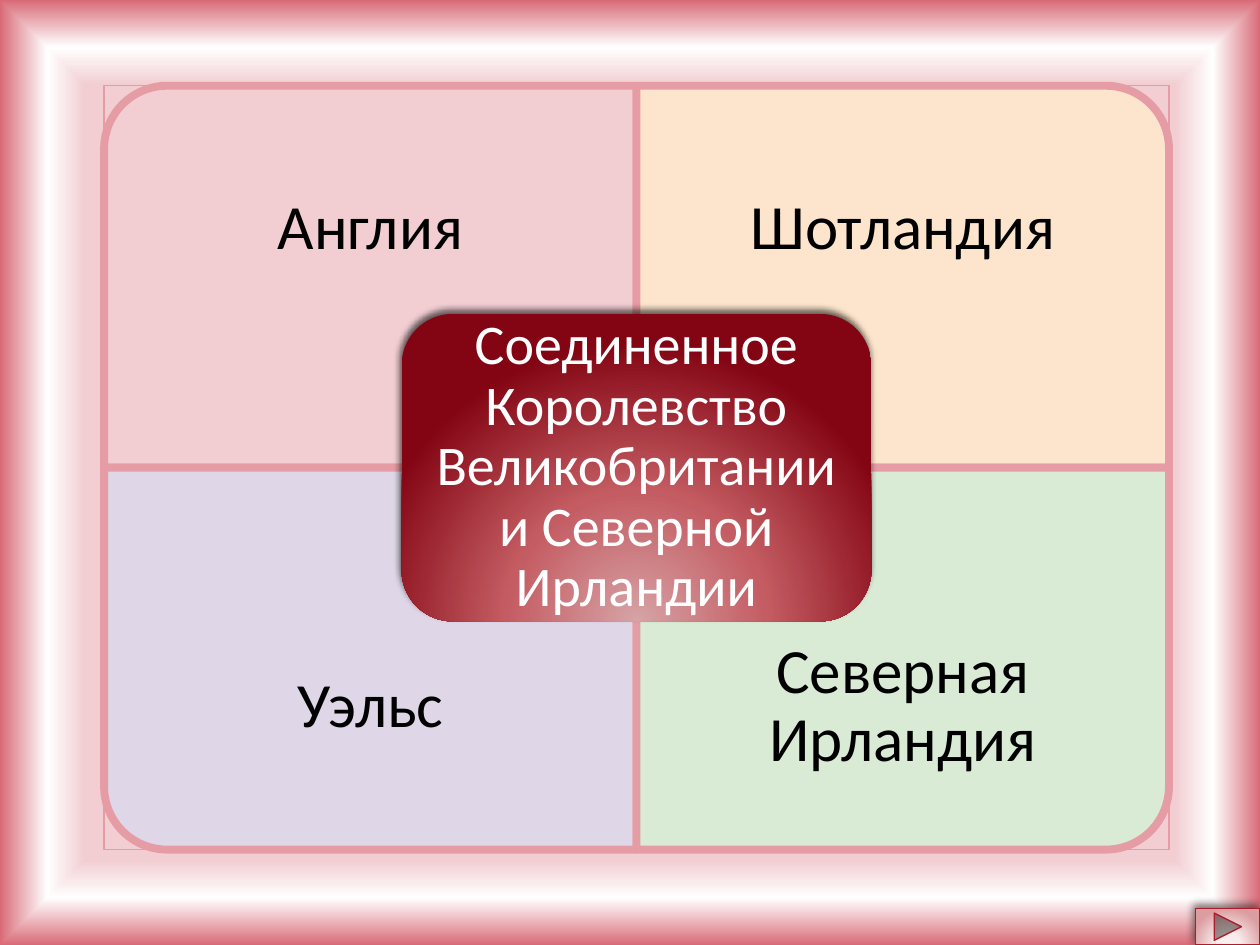
"""Build a slide showing the four parts of the United Kingdom around its full name."""
from math import cos, pi, sin

from lxml.etree import SubElement
from pptx import Presentation
from pptx.dml.color import RGBColor
from pptx.enum.shapes import MSO_SHAPE as Preset
from pptx.enum.text import MSO_ANCHOR as Anchor, PP_ALIGN as Align
from pptx.oxml.ns import qn
from pptx.util import Pt

BLACK = RGBColor(0x00, 0x00, 0x00)
WHITE = RGBColor(0xFF, 0xFF, 0xFF)
PINK = RGBColor(0xF2, 0xCE, 0xD2)
PEACH = RGBColor(0xFD, 0xE5, 0xCD)
LILAC = RGBColor(0xDF, 0xD7, 0xE7)
GREEN = RGBColor(0xD9, 0xEA, 0xD5)
ROSE = RGBColor(0xE6, 0x9C, 0xA4)
CORAL = RGBColor(0xD9, 0x6B, 0x77)
CRIMSON = RGBColor(0xAB, 0x1D, 0x2D)

COUNTRIES = [
    ("Англия", PINK, -1, -1),
    ("Шотландия", PEACH, 1, -1),
    ("Уэльс", LILAC, -1, 1),
    ("Северная Ирландия", GREEN, 1, 1),
]
KINGDOM = "Соединенное Королевство Великобритании и Северной Ирландии"

BACKDROP_STOPS = [(0, PINK), (82, PINK), (90, WHITE), (100, CORAL)]
KINGDOM_STOPS = [
    (0, RGBColor(0xD6, 0xA3, 0xA6)),
    (46, RGBColor(0xC4, 0x5D, 0x63)),
    (100, RGBColor(0x83, 0x04, 0x12)),
]
BUTTON_STOPS = [
    (0, RGBColor(0xFB, 0xF0, 0xF0)),
    (34, RGBColor(0xF9, 0xEC, 0xEC)),
    (100, RGBColor(0xDC, 0x9D, 0xA0)),
]
CENTRED = (50, 50, 50, 50)
BELOW = (50, 155, 50, -55)

SLIDE_W, SLIDE_H = 720, 540
MAP_LEFT, MAP_TOP, MAP_W, MAP_H = 59.5, 49, 608.5, 436.5
MID_X, MID_Y = MAP_LEFT + MAP_W / 2, MAP_TOP + MAP_H / 2
RADIUS, ARC_STEPS = 36, 24
KINGDOM_W, KINGDOM_H = 268.5, 175.7
BUTTON_W, BUTTON_H = 36.7, 20.9


def path_gradient(owner, fill, stops, path, focus):
    fill.gradient()
    gradient = owner._element.find(".//" + qn("a:gradFill"))
    for child in list(gradient):
        gradient.remove(child)
    stop_list = SubElement(gradient, qn("a:gsLst"))
    for position, color in stops:
        stop = SubElement(stop_list, qn("a:gs"), pos=str(position * 1000))
        SubElement(stop, qn("a:srgbClr"), val=str(color))
    shade = SubElement(gradient, qn("a:path"), path=path)
    sides = {side: str(share * 1000) for side, share in zip("ltrb", focus)}
    SubElement(shade, qn("a:fillToRect"), **sides)


def cast_shadow(shape, alpha, blur, distance):
    effects = shape._element.spPr.find(qn("a:effectLst"))
    shadow = SubElement(effects, qn("a:outerShdw"), blurRad=str(Pt(blur)),
                        dist=str(Pt(distance)), dir=str(245 * 60000), rotWithShape="0")
    color = SubElement(shadow, qn("a:srgbClr"), val=str(BLACK))
    SubElement(color, qn("a:alpha"), val=str(alpha * 1000))


def write(shape, text, *, size, color, top, bottom, side):
    frame = shape.text_frame
    frame.word_wrap = True
    frame.vertical_anchor = Anchor.MIDDLE
    frame.margin_left = frame.margin_right = Pt(side)
    frame.margin_top, frame.margin_bottom = Pt(top), Pt(bottom)
    paragraph = frame.paragraphs[0]
    paragraph.alignment = Align.CENTER
    paragraph.line_spacing = 0.9
    run = paragraph.add_run()
    run.text = text
    run.font.name, run.font.size = "Calibri", Pt(size)
    run.font.color.rgb = color


def outline(shape, color, width):
    shape.shadow.inherit = False
    shape.line.color.rgb = color
    shape.line.width = Pt(width)


def add_preset(shapes, preset, left, top, width, height):
    return shapes.add_shape(preset, Pt(left), Pt(top), Pt(width), Pt(height))


def add_quadrant(shapes, toward_x, toward_y):
    outer_x = MID_X + toward_x * MAP_W / 2
    outer_y = MID_Y + toward_y * MAP_H / 2
    angles = [pi / 2 * step / ARC_STEPS for step in range(ARC_STEPS + 1)]
    arc = [(outer_x - toward_x * RADIUS * (1 - sin(angle)),
            outer_y - toward_y * RADIUS * (1 - cos(angle))) for angle in angles]
    points = [(MID_X, outer_y), *arc, (outer_x, MID_Y)]
    builder = shapes.build_freeform(Pt(MID_X), Pt(MID_Y))
    builder.add_line_segments([(Pt(x), Pt(y)) for x, y in points], close=True)
    return builder.convert_to_shape()


def main():
    deck = Presentation()
    deck.slide_width, deck.slide_height = Pt(SLIDE_W), Pt(SLIDE_H)
    slide = deck.slides.add_slide(deck.slide_layouts[6])
    shapes = slide.shapes
    path_gradient(slide, slide.background.fill, BACKDROP_STOPS, "rect", CENTRED)

    frame = add_preset(shapes, Preset.RECTANGLE, MAP_LEFT, MAP_TOP, MAP_W, MAP_H)
    frame.fill.background()
    outline(frame, ROSE, 0.75)

    for country, color, toward_x, toward_y in COUNTRIES:
        quadrant = add_quadrant(shapes, toward_x, toward_y)
        quadrant.fill.solid()
        quadrant.fill.fore_color.rgb = color
        outline(quadrant, ROSE, 4.5)
        top, bottom = (20, 75) if toward_y < 0 else (75, 20)
        write(quadrant, country, size=36, color=BLACK, top=top, bottom=bottom, side=20)

    kingdom = add_preset(shapes, Preset.ROUNDED_RECTANGLE, MID_X - KINGDOM_W / 2,
                         MID_Y - KINGDOM_H / 2, KINGDOM_W, KINGDOM_H)
    path_gradient(kingdom, kingdom.fill, KINGDOM_STOPS, "circle", BELOW)
    kingdom.line.fill.background()
    kingdom.shadow.inherit = False
    cast_shadow(kingdom, 60, 4, 3)
    write(kingdom, KINGDOM, size=32, color=WHITE, top=9, bottom=9, side=9)

    button = add_preset(shapes, Preset.ACTION_BUTTON_FORWARD_OR_NEXT,
                        SLIDE_W - BUTTON_W, SLIDE_H - BUTTON_H, BUTTON_W, BUTTON_H)
    path_gradient(button, button.fill, BUTTON_STOPS, "circle", BELOW)
    outline(button, CRIMSON, 0.75)
    cast_shadow(button, 50, 5, 2)

    deck.save("out.pptx")


if __name__ == "__main__":
    main()
